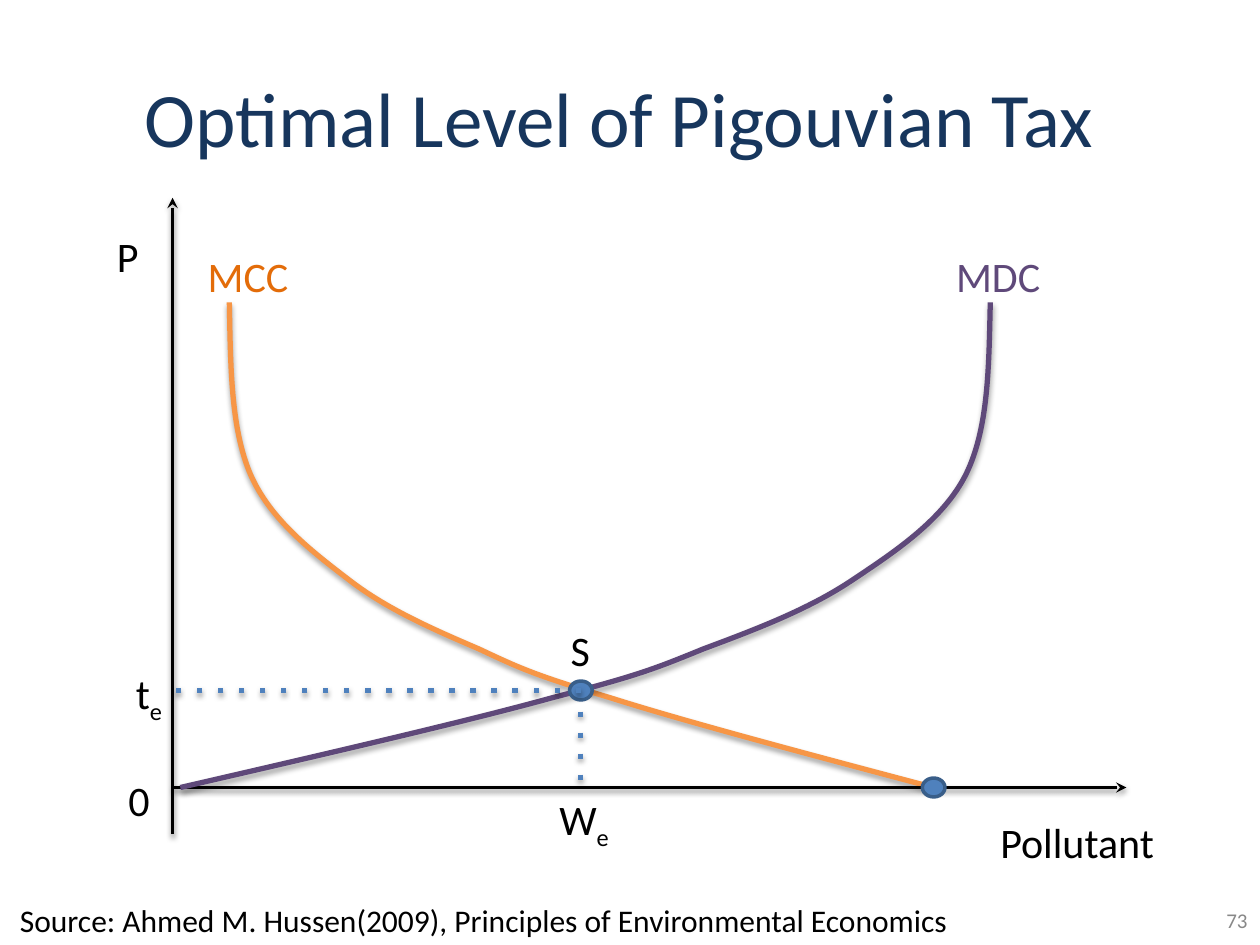
from lxml import etree
from pptx import Presentation
from pptx.dml.color import RGBColor
from pptx.enum import shapes, text
from pptx.oxml import parse_xml
from pptx.oxml.ns import nsdecls, qn
from pptx.util import Inches, Pt

NAVY = RGBColor(0x17, 0x36, 0x5D)
BLACK = RGBColor(0, 0, 0)
GRAY = RGBColor(0x88, 0x88, 0x88)
ORANGE = RGBColor(0xF7, 0x96, 0x46)
DARK_ORANGE = RGBColor(0xE3, 0x6C, 0x09)
PURPLE = RGBColor(0x5F, 0x49, 0x7A)
BLUE = RGBColor(0x4F, 0x81, 0xBD)
DARK_BLUE = RGBColor(0x39, 0x5E, 0x89)
FONT = "Calibri"

# Bezier points of the control cost curve: inches right of and above the origin
MCC_CURVE = [(0.45, 3.85), (0.46, 3.35), (0.46, 2.85), (0.62, 2.48),
             (0.78, 2.12), (1.11, 1.87), (1.41, 1.64),
             (1.71, 1.41), (2.08, 1.25), (2.43, 1.1),
             (2.77, 0.94), (2.88, 0.89), (3.48, 0.71),
             (4.08, 0.52), (5.06, 0.26), (6.04, 0)]
# The damage cost curve is its mirror image, stretched sideways
MDC_CURVE = [(6.49 - 1.15 * (x - 0.45), y) for x, y in MCC_CURVE]

SHADOW = (f'<a:effectLst {nsdecls("a")}><a:outerShdw blurRad="{Pt(3.1)}" '
          f'dist="{Pt(1.6)}" dir="5400000" rotWithShape="0"><a:srgbClr val="000000">'
          '<a:alpha val="38000"/></a:srgbClr></a:outerShdw></a:effectLst>')


def style_line(sp, color, width):
    sp.line.color.rgb = color
    sp.line.width = Pt(width)


def add_shadow(sp):
    props = sp._element.spPr
    for old in props.findall(qn("a:effectLst")):
        props.remove(old)
    props.append(parse_xml(SHADOW))


def add_label(parent, box, wording, size=24, color=BLACK, subscript="",
              align=text.PP_ALIGN.LEFT, anchor=text.MSO_ANCHOR.TOP):
    tf = parent.shapes.add_textbox(*map(Inches, box)).text_frame
    tf.word_wrap = True
    tf.vertical_anchor = anchor
    p = tf.paragraphs[0]
    p.text = wording
    p.alignment = align
    if subscript:
        r = p.add_run()
        r.text = subscript
        r.font._element.set("baseline", "-25000")
    for r in p.runs:
        r.font.name = FONT
        r.font.size = Pt(size)
        r.font.color.rgb = color


def add_line(parent, start, end, color, width, arrow=False, dotted=False):
    line = parent.shapes.add_connector(shapes.MSO_CONNECTOR.STRAIGHT,
                                       *map(Inches, start + end))
    style_line(line, color, width)
    ln = line.line._get_or_add_ln()
    if dotted:
        etree.SubElement(ln, qn("a:prstDash"), val="dot")
    if arrow:
        etree.SubElement(ln, qn("a:tailEnd"), type="stealth")
    add_shadow(line)


def add_curve(parent, knots, color):
    """Draw an outline through the knots, then make each three segments one Bezier."""
    first, *rest = [(Inches(x), Inches(y)) for x, y in knots]
    builder = parent.shapes.build_freeform(*first, scale=1.0)
    builder.add_line_segments(rest, close=False)
    curve = builder.convert_to_shape()
    outline = next(curve._element.iter(qn("a:path")))
    segments = outline.findall(qn("a:lnTo"))
    for i in range(0, len(segments), 3):
        bezier = etree.SubElement(outline, qn("a:cubicBezTo"))
        for segment in segments[i:i + 3]:
            bezier.append(segment[0])
            outline.remove(segment)
    curve.fill.background()
    style_line(curve, color, 3)
    add_shadow(curve)


def add_dot(parent, center, width=0.18, height=0.15):
    x, y = center
    dot = parent.shapes.add_shape(shapes.MSO_SHAPE.OVAL, Inches(x - width / 2),
                                  Inches(y - height / 2), Inches(width), Inches(height))
    dot.shadow.inherit = False
    dot.fill.solid()
    dot.fill.fore_color.rgb = BLUE
    style_line(dot, DARK_BLUE, 2)


def add_title(slide, box, wording):
    title = slide.shapes.title
    title.left, title.top, title.width, title.height = map(Inches, box)
    tf = title.text_frame
    tf.text = wording
    tf.vertical_anchor = text.MSO_ANCHOR.MIDDLE
    p = tf.paragraphs[0]
    p.alignment = text.PP_ALIGN.CENTER
    font = p.runs[0].font
    font.name, font.size = FONT, Pt(44)
    font.color.rgb = NAVY


def add_diagram(slide, left, bottom):
    """Draw the cost curves with the origin of the axes at (left, bottom)."""
    def at(x, y):
        return left + x, bottom - y

    group = slide.shapes.add_group_shape()
    optimum, zero_control = (3.24, 0.77), (6.04, 0)
    add_curve(group, [at(*k) for k in MCC_CURVE], ORANGE)
    add_line(group, at(0, 0), at(7.57, 0), BLACK, 2, arrow=True)
    add_line(group, at(0, -0.37), at(0, 4.68), BLACK, 2, arrow=True)

    labels = [("MDC", "", 6.12, 4.31, 1.26, PURPLE),
              ("MCC", "", 0.18, 4.31, 0.99, DARK_ORANGE),
              ("P", "", -0.54, 4.47, 0.54, BLACK),
              ("0", "", -0.45, 0.15, 0.54, BLACK),
              ("W", "e", 2.97, 0, 0.72, BLACK),
              ("S", "", 3.06, 1.34, 0.54, BLACK),
              ("t", "e", -0.39, 1, 0.72, BLACK),
              ("Pollutant", "", 6.47, -0.18, 1.59, BLACK)]
    for wording, subscript, x, y, width, color in labels:
        add_label(group, (*at(x, y), width, 0.49), wording,
                  color=color, subscript=subscript)

    add_curve(group, [at(*k) for k in MDC_CURVE], PURPLE)
    add_line(group, at(*optimum), at(optimum[0], 0), BLUE, 3, dotted=True)
    for point in (optimum, zero_control):
        add_dot(group, at(*point))
    add_line(group, at(*optimum), at(0.02, optimum[1]), BLUE, 3, dotted=True)


def add_footer(slide, top, height):
    add_label(slide, (0.06, top, 7.84, height),
              "Source: Ahmed M. Hussen(2009), Principles of Environmental Economics", 18)
    add_label(slide, (7.67, top, 2.33, height), "73", 12, GRAY,
              align=text.PP_ALIGN.RIGHT, anchor=text.MSO_ANCHOR.MIDDLE)


def main():
    prs = Presentation()
    prs.slide_width, prs.slide_height = Inches(10), Inches(7.5)
    slide = prs.slides.add_slide(prs.slide_layouts[5])
    add_title(slide, (0.2, 0.3, 9.57, 1.25), "Optimal Level of Pigouvian Tax ")
    add_diagram(slide, 1.37, 6.25)
    add_footer(slide, 7.1, 0.4)
    prs.save("out.pptx")


if __name__ == "__main__":
    main()
